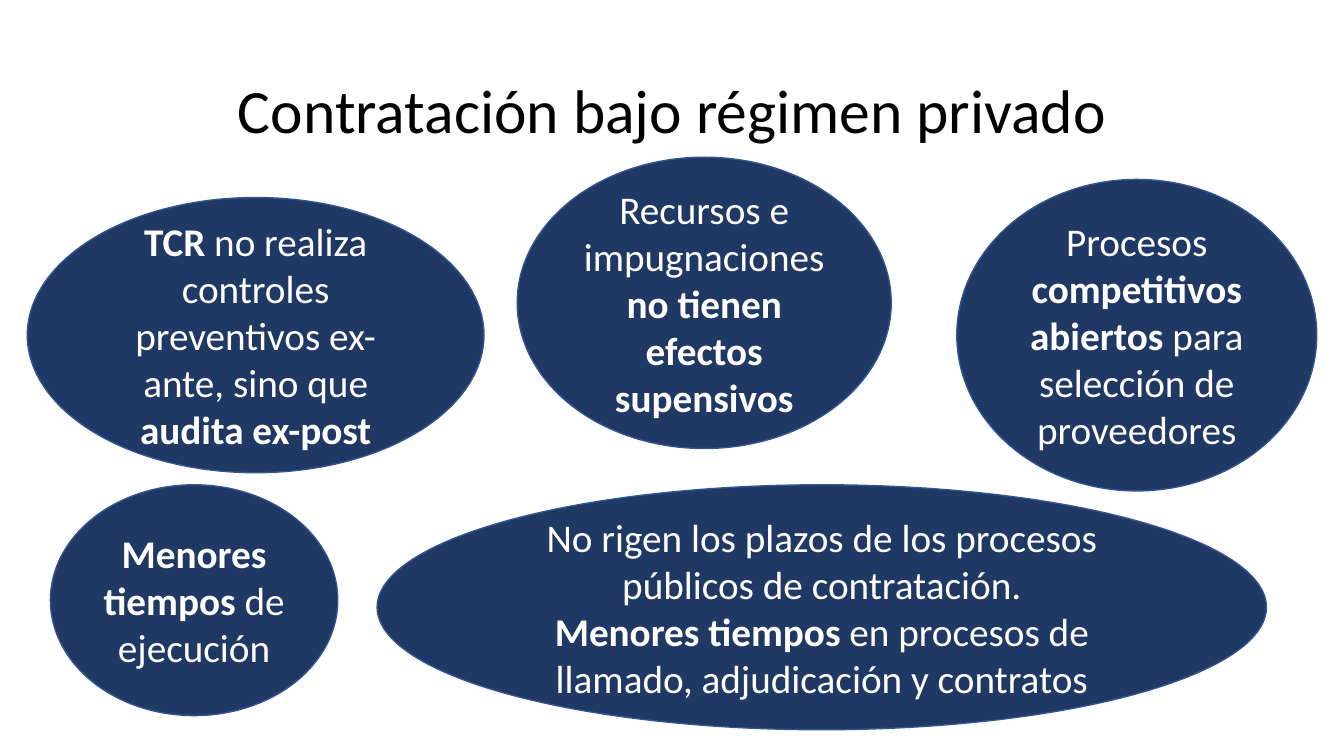
import pptx
import pptx.util
import pptx.dml.color
import pptx.enum.shapes
import pptx.enum.text
from dataclasses import dataclass


@dataclass(frozen=True)
class Theme:
    """Colours, font and type sizes."""
    font: str = "Calibri"
    ink: str = "000000"
    paper: str = "FFFFFF"
    navy: str = "203864"
    edge: str = "325491"
    head: int = 44
    body: int = 28


class Deck:
    """Draws on one slide, placing elements by percent of its size."""

    def __init__(self, theme):
        """Open a title-only slide."""
        self.theme = theme
        self.file = pptx.Presentation()
        self.file.slide_width = pptx.util.Inches(13.33)
        self.file.slide_height = pptx.util.Inches(7.5)
        self.slide = self.file.slides.add_slide(self.file.slide_layouts[5])
        fill = self.slide.background.fill
        fill.solid()
        fill.fore_color.rgb = self.tint(theme.paper)

    def tint(self, code):
        """Turn a hex code into a colour."""
        return pptx.dml.color.RGBColor.from_string(code)

    def box(self, left, top, width, height):
        """Turn percents into slide lengths."""
        wide, high = self.file.slide_width, self.file.slide_height
        sides = ((left, wide), (top, high), (width, wide), (height, high))
        return [round(share * side / 100) for share, side in sides]

    def style(self, run, size, tone, bold=False):
        """Format one run."""
        run.font.name = self.theme.font
        run.font.size = pptx.util.Pt(size)
        run.font.color.rgb = self.tint(tone)
        run.font.bold = bold

    def title(self, text, area):
        """Place and fill the title."""
        head = self.slide.shapes.title
        head.left, head.top, head.width, head.height = self.box(*area)
        frame = head.text_frame
        frame.text = text
        frame.vertical_anchor = pptx.enum.text.MSO_ANCHOR.MIDDLE
        line = frame.paragraphs[0]
        line.alignment = pptx.enum.text.PP_ALIGN.CENTER
        line.line_spacing = 0.9
        self.style(line.runs[0], self.theme.head, self.theme.ink)

    def oval(self, area, lines):
        """Draw an ellipse with lines of (text, bold) parts."""
        kind = pptx.enum.shapes.MSO_SHAPE.OVAL
        shape = self.slide.shapes.add_shape(kind, *self.box(*area))
        shape.shadow.inherit = False
        shape.fill.solid()
        shape.fill.fore_color.rgb = self.tint(self.theme.navy)
        shape.line.color.rgb = self.tint(self.theme.edge)
        shape.line.width = pptx.util.Pt(1)
        frame = shape.text_frame
        frame.word_wrap = True
        frame.vertical_anchor = pptx.enum.text.MSO_ANCHOR.MIDDLE
        for rank, parts in enumerate(lines):
            line = frame.add_paragraph() if rank else frame.paragraphs[0]
            line.alignment = pptx.enum.text.PP_ALIGN.CENTER
            for text, bold in parts:
                run = line.add_run()
                run.text = text
                self.style(run, self.theme.body, self.theme.paper, bold)


OVALS = [
    ((38.48, 20.8, 27.83, 38.53), [
        [("Recursos e impugnaciones ", False),
         ("no tienen efectos supensivos", True)]]),
    ((2.03, 26.13, 33.98, 36.4), [
        [("TCR", True),
         (" no realiza controles preventivos ex-ante, sino que ", False),
         ("audita ex-post", True)]]),
    ((28.06, 64.13, 66.17, 32.4), [
        [("No rigen los plazos de los procesos públicos de contratación.",
          False)],
        [("Menores tiempos ", True),
         ("en procesos de llamado, adjudicación y contratos", False)]]),
    ((3.75, 64.13, 21.38, 30.53), [
        [("Menores tiempos ", True), ("de ejecución", False)]]),
    ((71.19, 23.73, 26.78, 41.2), [
        [("Procesos ", False), ("competitivos abiertos ", True),
         ("para selección de proveedores", False)]]),
]


def main():
    """Build and save the slide."""
    deck = Deck(Theme())
    deck.title("Contratación bajo régimen privado", (6.9, 5.33, 86.27, 19.33))
    for area, lines in OVALS:
        deck.oval(area, lines)
    deck.file.save("out.pptx")


if __name__ == "__main__":
    main()
